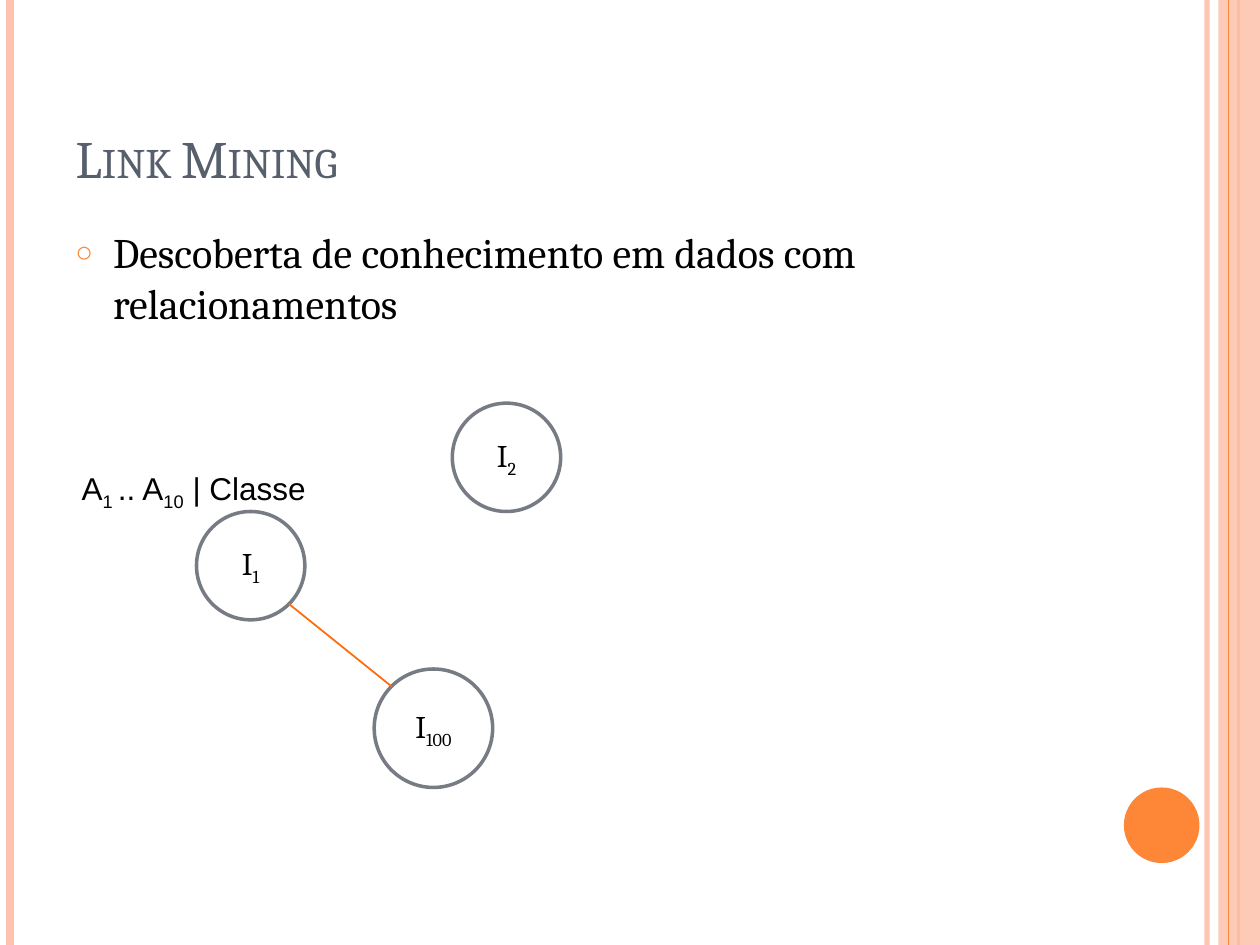
import math

import lxml.etree
import pptx
import pptx.dml.color
import pptx.enum.shapes
import pptx.enum.text
import pptx.oxml.ns
import pptx.util

Inches = pptx.util.Inches
Pt = pptx.util.Pt
RGBColor = pptx.dml.color.RGBColor
SHAPE = pptx.enum.shapes.MSO_SHAPE
ALIGN = pptx.enum.text.PP_ALIGN
ANCHOR = pptx.enum.text.MSO_ANCHOR
qn = pptx.oxml.ns.qn

WHITE = RGBColor(0xFF, 0xFF, 0xFF)
BLACK = RGBColor(0x00, 0x00, 0x00)
SLATE = RGBColor(0x57, 0x5F, 0x6D)
GREY = RGBColor(0x77, 0x7C, 0x84)
PEACH = RGBColor(0xFE, 0xC3, 0xAE)
ORANGE = RGBColor(0xFE, 0x86, 0x37)
EDGE = RGBColor(0xFF, 0x6B, 0x0A)


def add_tag(parent, tag, **attrs):
    child = lxml.etree.SubElement(parent, qn(tag))
    for key, value in attrs.items():
        child.set(key, str(value))
    return child


def fade(shape, percent):
    color = next(shape._element.spPr.iter(qn("a:srgbClr")))
    add_tag(color, "a:alpha", val=percent * 1000)


def add_line(slide, start, end, color, width):
    points = [Inches(v) for v in (*start, *end)]
    line = slide.shapes.add_connector(
        pptx.enum.shapes.MSO_CONNECTOR.STRAIGHT, *points)
    line.line.color.rgb = color
    line.line.width = Pt(width)
    add_tag(line._element.spPr, "a:effectLst")
    return line


def add_solid(slide, kind, box, fill, line=None):
    shape = slide.shapes.add_shape(kind, *[Inches(v) for v in box])
    shape.shadow.inherit = False
    shape.fill.solid()
    shape.fill.fore_color.rgb = fill
    if line is None:
        shape.line.fill.background()
    else:
        shape.line.color.rgb = line
        shape.line.width = Pt(2)
    return shape


def add_run(para, text, size, color=BLACK, face="Cambria", sub=False):
    run = para.add_run()
    run.text = text
    run.font.size = Pt(size)
    run.font.name = face
    run.font.color.rgb = color
    if sub:
        run.font._element.set("baseline", "-25000")
    return run


def add_frame(slide, box):
    left, top, width, height = box
    bottom = top + height

    def add_rule(x, color, weight):
        return add_line(slide, (left + x, top), (left + x, bottom), color, weight)

    fade(add_rule(9.58, PEACH, 3), 93)
    add_rule(0.08, PEACH, 4.5)
    add_rule(9.83, ORANGE, 1.5)
    band = (left + width - 0.33, top, 0.33, height)
    fade(add_solid(slide, SHAPE.RECTANGLE, band, PEACH), 87)
    add_rule(9.75, ORANGE, 0.75)
    add_solid(slide, SHAPE.OVAL, (left + 8.92, top + 6.25, 0.6, 0.6), ORANGE)


def add_title(slide, box):
    title = slide.shapes.title
    title.left, title.top, title.width, title.height = [Inches(v) for v in box]
    title.text_frame.vertical_anchor = ANCHOR.BOTTOM
    para = title.text_frame.paragraphs[0]
    para.alignment = ALIGN.LEFT
    run = add_run(para, "Link Mining", 30, SLATE)
    run.font._element.set("cap", "small")


def add_body(slide, box):
    frame = slide.shapes.add_textbox(*[Inches(v) for v in box]).text_frame
    frame.word_wrap = True
    para = frame.paragraphs[0]
    para.space_before = Pt(6)
    props = para._p.get_or_add_pPr()
    props.set("marL", str(Inches(0.3)))
    props.set("indent", str(Inches(-0.3)))
    add_tag(add_tag(props, "a:buClr"), "a:srgbClr", val=ORANGE)
    add_tag(props, "a:buSzPct", val=70000)
    add_tag(props, "a:buFont", typeface="Arial")
    add_tag(props, "a:buChar", char="○")
    add_run(para, "Descoberta de conhecimento em dados com relacionamentos", 24)


def add_node(slide, box, index):
    frame = add_solid(slide, SHAPE.OVAL, box, WHITE, GREY).text_frame
    frame.vertical_anchor = ANCHOR.MIDDLE
    frame.word_wrap = True
    para = frame.paragraphs[0]
    para.alignment = ALIGN.CENTER
    add_run(para, "I", 18)
    add_run(para, index, 18, sub=True)


def rim_point(box, sign):
    left, top, size, _ = box
    shift = size / 2 * (1 + sign * math.sqrt(0.5))
    return left + shift, top + shift


def add_label(slide, box):
    frame = slide.shapes.add_textbox(*[Inches(v) for v in box]).text_frame
    frame.word_wrap = False
    para = frame.paragraphs[0]
    parts = [("A", False), ("1 ", True), (".. A", False),
             ("10", True), (" | Classe", False)]
    for text, sub in parts:
        add_run(para, text, 18, face="Arial", sub=sub)


def add_graph(slide, box):
    left, top = box[:2]
    first = (left + 1.01, top + 0.86, 0.86, 0.86)
    second = (left + 3.04, top, 0.86, 0.86)
    last = (left + 2.42, top + 2.11, 0.94, 0.94)
    for place, index in ((first, "1"), (second, "2"), (last, "100")):
        add_node(slide, place, index)
    add_line(slide, rim_point(first, 1), rim_point(last, -1), EDGE, 1)
    add_label(slide, (left, top + 0.47, 2.06, 0.81))


def main():
    deck = pptx.Presentation()
    deck.slide_width = Inches(10)
    deck.slide_height = Inches(7.5)
    slide = deck.slides.add_slide(deck.slide_layouts[5])
    add_frame(slide, (0, 0, 10, 7.5))
    add_title(slide, (0.5, 0.3, 8.17, 1.25))
    add_body(slide, (0.5, 1.75, 8.17, 5.33))
    add_graph(slide, (0.55, 3.2, 3.9, 3.05))
    deck.save("out.pptx")


if __name__ == "__main__":
    main()
